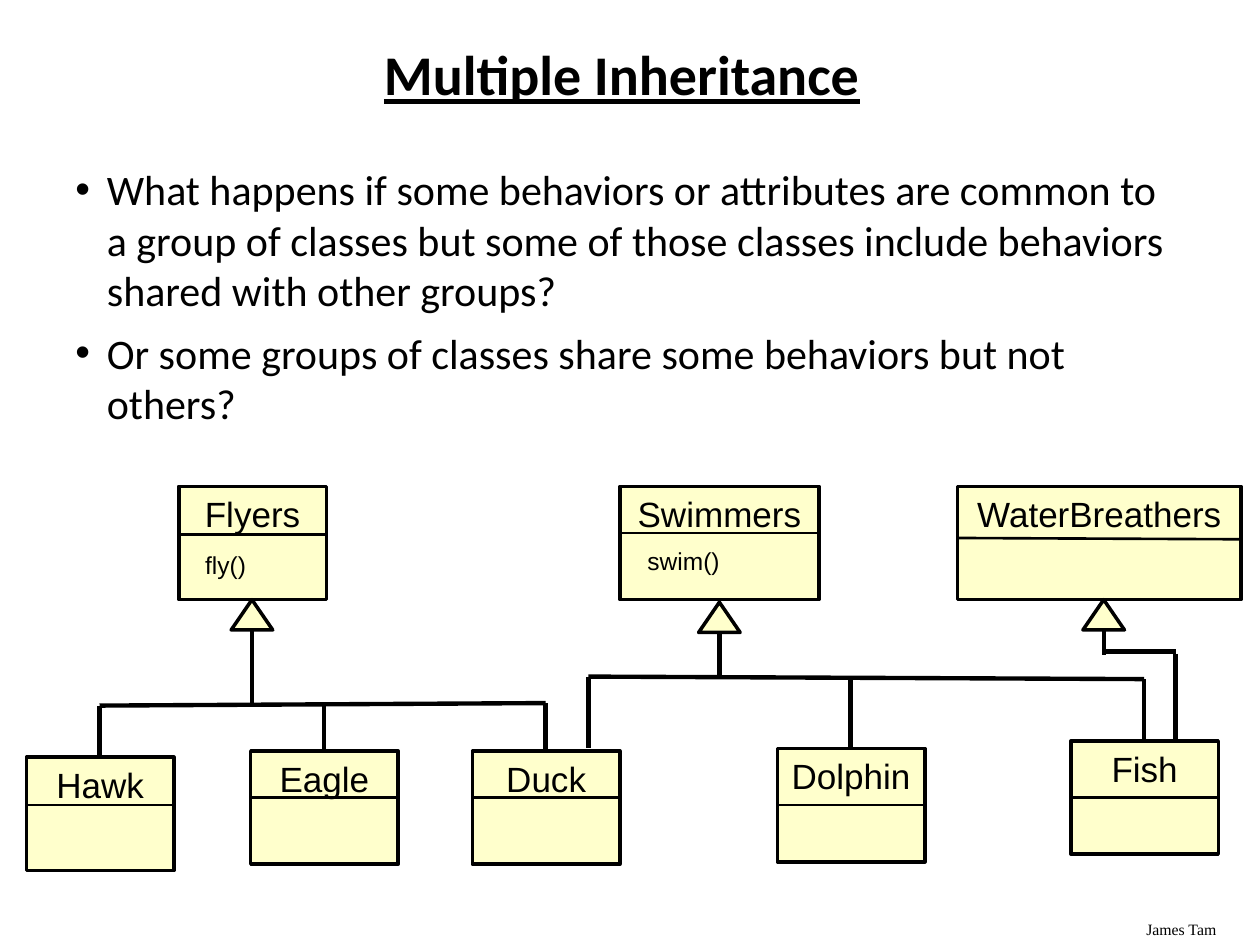
from lxml.etree import SubElement
from pptx import Presentation
from pptx.dml.color import RGBColor
from pptx.enum.shapes import MSO_CONNECTOR, MSO_SHAPE
from pptx.enum.text import MSO_ANCHOR, PP_ALIGN
from pptx.oxml.ns import qn
from pptx.util import Inches, Pt

BLACK = RGBColor(0x00, 0x00, 0x00)
WHITE = RGBColor(0xFF, 0xFF, 0xFF)
CREAM = RGBColor(0xFF, 0xFF, 0xCC)

BOX_WIDTH, BOX_HEIGHT = 1.17, 0.9
ARROW_WIDTH, ARROW_HEIGHT = 0.33, 0.24
DIVIDER, OUTLINE, BRANCH = 1.5, 2, 2.5  # line widths in points


class ClassDiagram:
    """Holds the style and the current slide."""

    def __init__(self, slide):
        self.slide = slide
        self.shapes = slide.shapes
        slide.background.fill.solid()
        slide.background.fill.fore_color.rgb = WHITE

    def add_text(self, paragraph, text, name, size, font_format=None, **paragraph_format):
        run = paragraph.add_run()
        run.text = text
        run.font.color.rgb = BLACK
        values = {"name": name, "size": Pt(size), **(font_format or {})}
        for target, settings in ((run.font, values), (paragraph, paragraph_format)):
            for key, value in settings.items():
                setattr(target, key, value)

    def title(self, text, *place):
        shape = self.shapes.title
        shape.left, shape.top, shape.width, shape.height = map(Inches, place)
        shape.text_frame.vertical_anchor = MSO_ANCHOR.MIDDLE
        self.add_text(shape.text_frame.paragraphs[0], text, "Calibri", 32,
                      {"bold": True, "underline": True},
                      alignment=PP_ALIGN.CENTER, line_spacing=0.9)

    def text_box(self, *place):
        frame = self.shapes.add_textbox(*map(Inches, place)).text_frame
        frame.word_wrap = True
        return frame

    def bullets(self, texts, *place):
        frame = self.text_box(*place)
        for index, text in enumerate(texts):
            paragraph = frame.add_paragraph() if index else frame.paragraphs[0]
            self.add_text(paragraph, text, "Calibri", 24, space_before=Pt(7))
            properties = paragraph._p.get_or_add_pPr()
            properties.set("marL", str(Inches(0.25)))
            properties.set("indent", str(-Inches(0.25)))
            SubElement(properties, qn("a:buFont")).set("typeface", "Arial")
            SubElement(properties, qn("a:buChar")).set("char", "•")

    def footer(self, text, *place):
        self.add_text(self.text_box(*place).paragraphs[0], text, "Times New Roman", 9)

    def shape(self, kind, *place, outlined=True):
        shape = self.shapes.add_shape(kind, *map(Inches, place))
        shape.shadow.inherit = False
        shape.fill.solid()
        shape.fill.fore_color.rgb = CREAM
        if outlined:
            shape.line.color.rgb = BLACK
            shape.line.width = Pt(OUTLINE)
        else:
            shape.line.fill.background()
        return shape

    def line(self, start, end, width=BRANCH):
        connector = self.shapes.add_connector(
            MSO_CONNECTOR.STRAIGHT, *map(Inches, (*start, *end)))
        connector.line.color.rgb = BLACK
        connector.line.width = Pt(width)
        SubElement(connector._element.spPr, qn("a:effectLst"))

    def class_box(self, name, left, top, divider, width=BOX_WIDTH, slope=0):
        shape = self.shape(MSO_SHAPE.RECTANGLE, left, top, width, BOX_HEIGHT)
        frame = shape.text_frame
        frame.vertical_anchor = MSO_ANCHOR.TOP
        frame.word_wrap = False
        self.add_text(frame.paragraphs[0], name, "Arial", 20, alignment=PP_ALIGN.CENTER)
        self.line((left, divider), (left + width, divider + slope), DIVIDER)

    def method(self, text, *place):
        shape = self.shape(MSO_SHAPE.RECTANGLE, *place, outlined=False)
        shape.text_frame.vertical_anchor = MSO_ANCHOR.MIDDLE
        self.add_text(shape.text_frame.paragraphs[0], text, "Arial", 14,
                      alignment=PP_ALIGN.LEFT, space_before=Pt(6))

    def inheritance_arrow(self, center, top, stem_end):
        self.shape(MSO_SHAPE.ISOSCELES_TRIANGLE, center - ARROW_WIDTH / 2, top,
                   ARROW_WIDTH, ARROW_HEIGHT)
        self.line((center, top + ARROW_HEIGHT), (center, stem_end))


def main():
    presentation = Presentation()
    presentation.slide_width, presentation.slide_height = Inches(10), Inches(7.5)
    diagram = ClassDiagram(presentation.slides.add_slide(presentation.slide_layouts[5]))

    # Text
    diagram.footer("James Tam", 9, 7.25, 1, 0.25)
    diagram.title("Multiple Inheritance", 0.47, 0.33, 8.93, 0.57)
    diagram.bullets([
        "What happens if some behaviors or attributes are common to a group of "
        "classes but some of those classes include behaviors shared with other groups?",
        "Or some groups of classes share some behaviors but not others?",
    ], 0.5, 1.25, 9, 2.17)

    # Parent classes
    diagram.class_box("Swimmers", 4.92, 3.86, 4.23, width=1.58)
    diagram.method("swim()", 5.04, 4.28, 0.79, 0.34)
    diagram.class_box("WaterBreathers", 7.6, 3.86, 4.27, width=2.25, slope=0.01)
    diagram.class_box("Flyers", 1.42, 3.86, 4.24)
    diagram.method("fly()", 1.53, 4.31, 0.58, 0.34)

    # Child classes: name, left, top, divider
    for child in (("Hawk", 0.21, 6.01, 6.39), ("Eagle", 1.99, 5.96, 6.33),
                  ("Duck", 3.75, 5.96, 6.33), ("Dolphin", 6.17, 5.94, 6.39),
                  ("Fish", 8.5, 5.88, 6.33)):
        diagram.class_box(*child)

    # Arrows up to the parents: center, top, end of stem
    for arrow in ((2, 4.76, 5.58), (5.71, 4.78, 5.39), (8.76, 4.76, 5.2)):
        diagram.inheritance_arrow(*arrow)

    # Crossbars
    for start, end in (((0.79, 5.6), (4.33, 5.58)),
                       ((4.67, 5.37), (9.08, 5.39)),
                       ((8.76, 5.17), (9.33, 5.17))):
        diagram.line(start, end)

    # Drops to the children: x, top, bottom
    for x, top, bottom in ((0.79, 5.6, 6.01), (2.57, 5.58, 5.96), (4.33, 5.58, 5.96),
                           (4.67, 5.37, 5.94), (6.75, 5.39, 5.94), (9.08, 5.39, 5.88),
                           (9.33, 5.19, 5.88)):
        diagram.line((x, top), (x, bottom))

    presentation.save("out.pptx")


if __name__ == "__main__":
    main()
